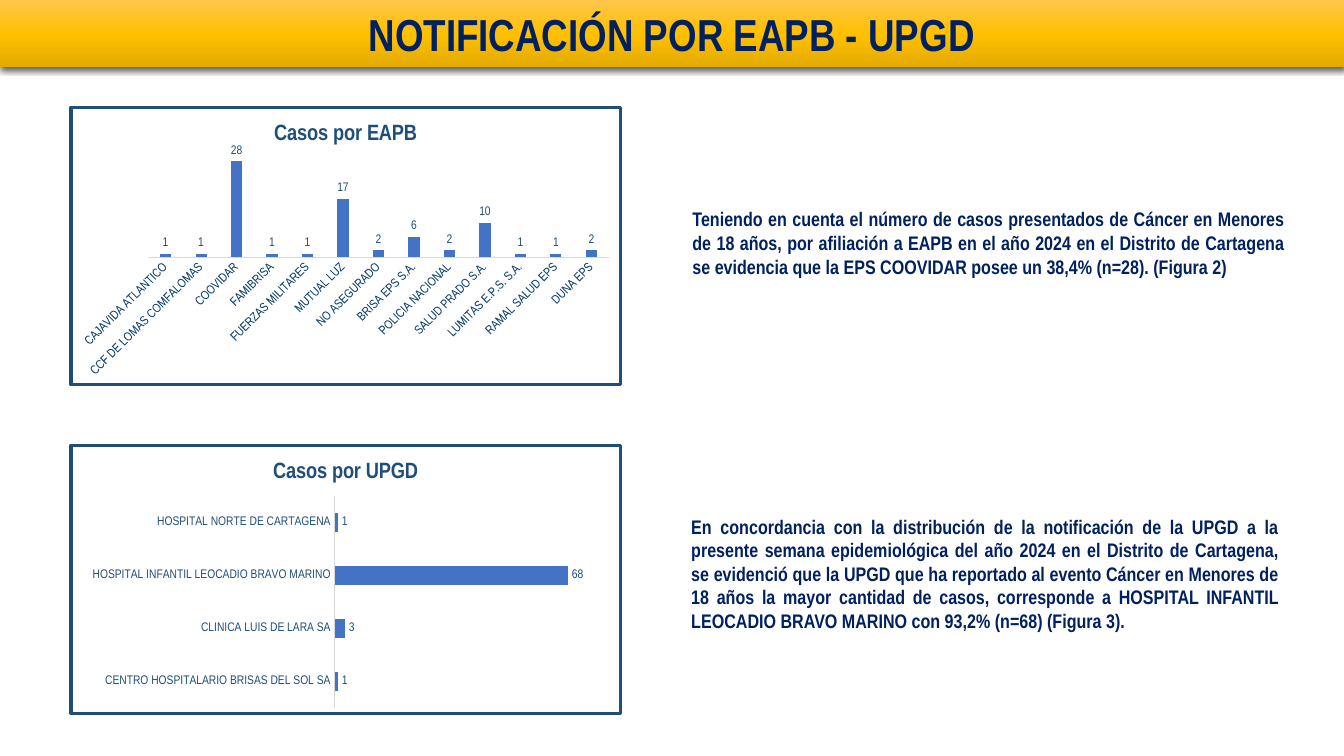
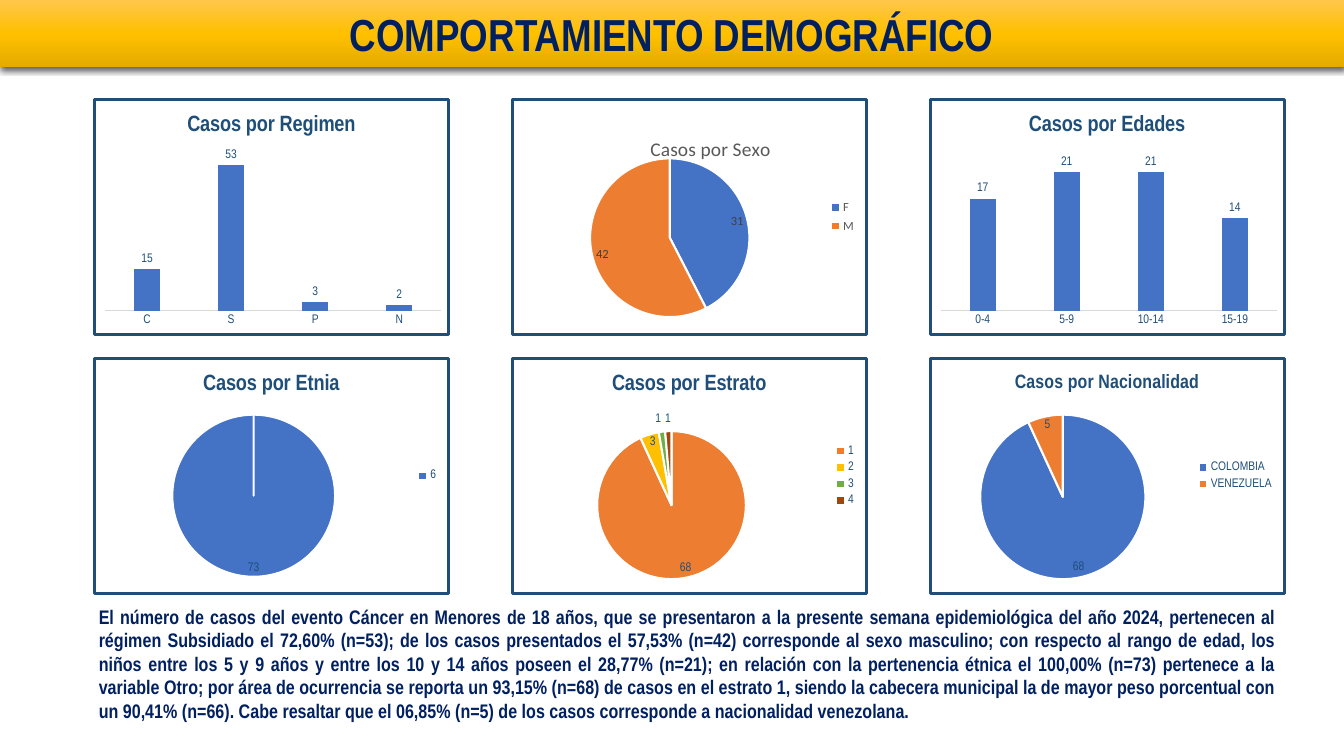
from pptx import Presentation
from pptx.chart.data import CategoryChartData
from pptx.dml.color import RGBColor
from pptx.enum.chart import (XL_CHART_TYPE, XL_LABEL_POSITION,
                             XL_LEGEND_POSITION, XL_TICK_MARK)
from pptx.enum.text import MSO_ANCHOR, MSO_AUTO_SIZE, PP_ALIGN
from pptx.oxml import parse_xml
from pptx.oxml.ns import nsdecls, qn
from pptx.util import Cm, Pt

COLUMN = XL_CHART_TYPE.COLUMN_CLUSTERED
BAR = XL_CHART_TYPE.BAR_CLUSTERED
PIE = XL_CHART_TYPE.PIE
OUTSIDE = XL_LABEL_POSITION.OUTSIDE_END
BEST_FIT = XL_LABEL_POSITION.BEST_FIT
RIGHT = XL_LEGEND_POSITION.RIGHT
NO_TICK = XL_TICK_MARK.NONE
MIDDLE, TOP = MSO_ANCHOR.MIDDLE, MSO_ANCHOR.TOP
NO_FIT = MSO_AUTO_SIZE.NONE
CENTER, JUSTIFY = PP_ALIGN.CENTER, PP_ALIGN.JUSTIFY

NAVY = RGBColor(0x00, 0x20, 0x60)
STEEL = RGBColor(0x1F, 0x4E, 0x79)
BLUE = RGBColor(0x44, 0x72, 0xC4)
ORANGE = RGBColor(0xED, 0x7D, 0x31)
GOLD = RGBColor(0xFF, 0xC0, 0x00)
GREEN = RGBColor(0x70, 0xAD, 0x47)
BROWN = RGBColor(0x9E, 0x48, 0x0E)
GRAY = RGBColor(0x59, 0x59, 0x59)
DARK = RGBColor(0x40, 0x40, 0x40)
SILVER = RGBColor(0xD9, 0xD9, 0xD9)
WHITE = RGBColor(0xFF, 0xFF, 0xFF)
BAND_STOPS = {0: RGBColor(0xFF, 0xC6, 0x4B), 50: GOLD,
              100: RGBColor(0xE3, 0xAB, 0x00)}

NARROW, CALIBRI = "Arial Narrow", "Calibri"
W, H = 33.87, 19.05


def set_font(font, color, **values):
    for key, value in values.items():
        setattr(font, key, value)
    font.color.rgb = color


def set_layout(parent, index, **box):
    """Place a chart part by fractions of the chart area."""
    for old in parent.findall(qn("c:layout")):
        parent.remove(old)
    inner = '<c:layoutTarget val="inner"/>' if "w" in box else ""
    sizes = "".join(f'<c:{k} val="{v}"/>' for k, v in box.items())
    parent.insert(index, parse_xml(
        f'<c:layout {nsdecls("c")}><c:manualLayout>{inner}'
        '<c:xMode val="edge"/><c:yMode val="edge"/>'
        f'{sizes}</c:manualLayout></c:layout>'))


class Deck:
    text_style = dict(name=NARROW, size=Pt(14), bold=True)
    heading_style = dict(name=NARROW, size=Pt(32), bold=True)

    def __init__(self):
        self.prs = Presentation()
        self.prs.slide_width, self.prs.slide_height = Cm(W), Cm(H)
        self.s = None

    def slide(self, title):
        """Add a slide with the gold title band."""
        self.s = self.prs.slides.add_slide(self.prs.slide_layouts[5])
        sp = self.s.shapes.title
        box = dict(left=0, top=0, width=Cm(W), height=Cm(1.7))
        for key, value in box.items():
            setattr(sp, key, value)
        stops = "".join(
            f'<a:gs pos="{pos * 1000}"><a:srgbClr val="{color}"/></a:gs>'
            for pos, color in BAND_STOPS.items())
        pr = sp.element.spPr
        pr.append(parse_xml(
            f'<a:gradFill {nsdecls("a")}><a:gsLst>{stops}</a:gsLst>'
            '<a:lin ang="5400000" scaled="0"/></a:gradFill>'))
        pr.append(parse_xml(
            f'<a:effectLst {nsdecls("a")}><a:outerShdw blurRad="57150" '
            'dist="19050" dir="5400000" algn="ctr" rotWithShape="0">'
            '<a:srgbClr val="000000"><a:alpha val="63000"/></a:srgbClr>'
            '</a:outerShdw></a:effectLst>'))
        self.put_text(sp.text_frame, title, CENTER, MIDDLE, self.heading_style)

    def put_text(self, tf, text, align, anchor, style):
        values = dict(word_wrap=True, auto_size=NO_FIT, vertical_anchor=anchor)
        for key, value in values.items():
            setattr(tf, key, value)
        p = tf.paragraphs[0]
        p.alignment = align
        r = p.add_run()
        r.text = text
        set_font(r.font, NAVY, **style)

    def text(self, text, x, y, w, h, anchor=MIDDLE):
        sp = self.s.shapes.add_textbox(Cm(x), Cm(y), Cm(w), Cm(h))
        self.put_text(sp.text_frame, text, JUSTIFY, anchor, self.text_style)

    def chart(self, kind, title, data, box, plot_box, title_size=16,
              name=NARROW, color=STEEL, label_color=STEEL, bold=True):
        """Add a framed chart with title and data labels."""
        cd = CategoryChartData()
        cd.categories = list(data)
        cd.add_series("Series 1", list(data.values()))
        chart = self.s.shapes.add_chart(
            kind, *(Cm(v) for v in box), cd).chart
        set_font(chart.font, color, name=name, size=Pt(10))
        chart.element.find(qn("c:chart")).addnext(parse_xml(
            f'<c:spPr {nsdecls("c", "a")}><a:solidFill>'
            f'<a:srgbClr val="{WHITE}"/></a:solidFill>'
            f'<a:ln w="{Pt(2.25)}"><a:solidFill><a:srgbClr val="{STEEL}"/>'
            '</a:solidFill><a:round/></a:ln></c:spPr>'))
        chart.has_title = True
        r = chart.chart_title.text_frame.paragraphs[0].add_run()
        r.text = title
        set_font(r.font, color, name=name, size=Pt(title_size), bold=bold)
        set_layout(chart.element.find(".//" + qn("c:plotArea")), 0,
                   **dict(zip("xywh", plot_box)))
        plot = chart.plots[0]
        plot.vary_by_categories = kind == PIE
        plot.has_data_labels = True
        labels = plot.data_labels
        labels.show_value = True
        labels.position = BEST_FIT if kind == PIE else OUTSIDE
        set_font(labels.font, label_color, name=name, size=Pt(9))
        return chart

    def bars(self, kind, title, data, box, plot_box, top,
             gap=219, overlap=-27, slanted=False):
        chart = self.chart(kind, title, data, box, plot_box)
        chart.has_legend = False
        plot = chart.plots[0]
        plot.gap_width, plot.overlap = gap, overlap
        fill = plot.series[0].format.fill
        fill.solid()
        fill.fore_color.rgb = BLUE
        values = dict(visible=False, has_major_gridlines=False,
                      minimum_scale=0, maximum_scale=top)
        for key, value in values.items():
            setattr(chart.value_axis, key, value)
        axis = chart.category_axis
        axis.major_tick_mark = NO_TICK
        axis.format.line.color.rgb = SILVER
        axis.format.line.width = Pt(0.75)
        set_font(axis.tick_labels.font, STEEL, name=NARROW, size=Pt(9))
        if slanted:
            cat_axis = chart.element.find(".//" + qn("c:catAx"))
            body = cat_axis.find(qn("c:txPr")).find(qn("a:bodyPr"))
            body.set("rot", "-2700000")

    def pie(self, title, data, colors, box, plot_box, title_at=None, **style):
        chart = self.chart(PIE, title, data, box, plot_box, **style)
        chart.has_legend = True
        legend = chart.legend
        legend.position, legend.include_in_layout = RIGHT, False
        set_font(legend.font, style.get("color", STEEL),
                 name=style.get("name", NARROW), size=Pt(9))
        if title_at:
            set_layout(chart.element.find(".//" + qn("c:title")), 1,
                       **dict(zip("xy", title_at)))
        for i, color in enumerate(colors):
            fmt = chart.plots[0].series[0].points[i].format
            fmt.fill.solid()
            fmt.fill.fore_color.rgb = color
            fmt.line.color.rgb = WHITE
            fmt.line.width = Pt(1.5)


def cell(col, row):
    """Frame of one chart in the 3 by 2 grid."""
    return 2.34 + col * 10.53, 2.46 + row * 6.53, 9, 6


def main():
    d = Deck()

    # Cases by insurer and by reporting unit
    d.slide("NOTIFICACIÓN POR EAPB - UPGD")
    d.text("Teniendo en cuenta el número de casos presentados de Cáncer en "
           "Menores de 18 años, por afiliación a EAPB en el año 2024 en el "
           "Distrito de Cartagena se evidencia que la EPS COOVIDAR posee un "
           "38,4% (n=28). (Figura 2)", 17.2, 3.5, 15.44, 5.23)
    d.text("En concordancia con la distribución de la notificación de la UPGD "
           "a la presente semana epidemiológica del año 2024 en el Distrito de "
           "Cartagena, se evidenció que la UPGD que ha reportado al evento "
           "Cáncer en Menores de 18 años la mayor cantidad de casos, "
           "corresponde a HOSPITAL INFANTIL LEOCADIO BRAVO MARINO con 93,2% "
           "(n=68) (Figura 3).", 17.17, 11.25, 15.32, 6.4)
    insurers = {
        "CAJAVIDA ATLANTICO": 1, "CCF DE LOMAS COMFALOMAS": 1, "COOVIDAR": 28,
        "FAMIBRISA": 1, "FUERZAS MILITARES": 1, "MUTUAL LUZ": 17,
        "NO ASEGURADO": 2, "BRISA EPS S.A.": 6, "POLICIA NACIONAL": 2,
        "SALUD PRADO S.A.": 10, "LUMITAS E.P.S. S.A.": 1,
        "RAMAL SALUD EPS": 1, "DUNA EPS": 2}
    units = {
        "CENTRO HOSPITALARIO BRISAS DEL SOL SA": 1,
        "CLINICA LUIS DE LARA SA": 3,
        "HOSPITAL INFANTIL LEOCADIO BRAVO MARINO": 68,
        "HOSPITAL NORTE DE CARTAGENA": 1}
    d.bars(COLUMN, "Casos por EAPB", insurers, (1.75, 2.67, 13.92, 7.06),
           (0.14, 0.17, 0.84, 0.37), 30, slanted=True)
    d.bars(BAR, "Casos por UPGD", units, (1.75, 11.18, 13.92, 6.83),
           (0.48, 0.19, 0.5, 0.79), 80, gap=182, overlap=0)

    # Demographic profile
    d.slide("COMPORTAMIENTO DEMOGRÁFICO")
    small_plot = (0.03, 0.2, 0.95, 0.7)
    d.bars(COLUMN, "Casos por Regimen", {"C": 15, "S": 53, "P": 3, "N": 2},
           cell(0, 0), small_plot, 60)
    d.pie("Casos por Sexo", {"F": 31, "M": 42}, [BLUE, ORANGE], cell(1, 0),
          (0.22, 0.25, 0.45, 0.68), title_at=(0.38, 0.14), title_size=14,
          name=CALIBRI, color=GRAY, label_color=DARK, bold=False)
    d.bars(COLUMN, "Casos por Edades",
           {"0-4": 17, "5-9": 21, "10-14": 21, "15-19": 14},
           cell(2, 0), small_plot, 25)
    d.pie("Casos por Etnia", {"6": 73}, [BLUE], cell(0, 1),
          (0.22, 0.24, 0.46, 0.69))
    d.pie("Casos por Estrato", {"1": 68, "2": 3, "3": 1, "4": 1},
          [ORANGE, GOLD, GREEN, BROWN], cell(1, 1), (0.24, 0.31, 0.42, 0.63))
    d.pie("Casos por Nacionalidad", {"COLOMBIA": 68, "VENEZUELA": 5},
          [BLUE, ORANGE], cell(2, 1), (0.14, 0.24, 0.47, 0.7), title_size=14)
    d.text("El número de casos del evento Cáncer en Menores de 18 años, que se "
           "presentaron a la presente semana epidemiológica del año 2024, "
           "pertenecen al régimen Subsidiado el 72,60% (n=53); de los casos "
           "presentados el 57,53% (n=42) corresponde al sexo masculino; con "
           "respecto al rango de edad, los niños entre los 5 y 9 años y entre "
           "los 10 y 14 años poseen el 28,77% (n=21); en relación con la "
           "pertenencia étnica el 100,00% (n=73) pertenece a la variable Otro; "
           "por área de ocurrencia se reporta un 93,15% (n=68) de casos en el "
           "estrato 1, siendo la cabecera municipal la de mayor peso "
           "porcentual con un 90,41% (n=66). Cabe resaltar que el 06,85% (n=5) "
           "de los casos corresponde a nacionalidad venezolana.",
           2.24, 15.11, 30.18, 3.25, TOP)

    d.prs.save("out.pptx")


if __name__ == "__main__":
    main()
